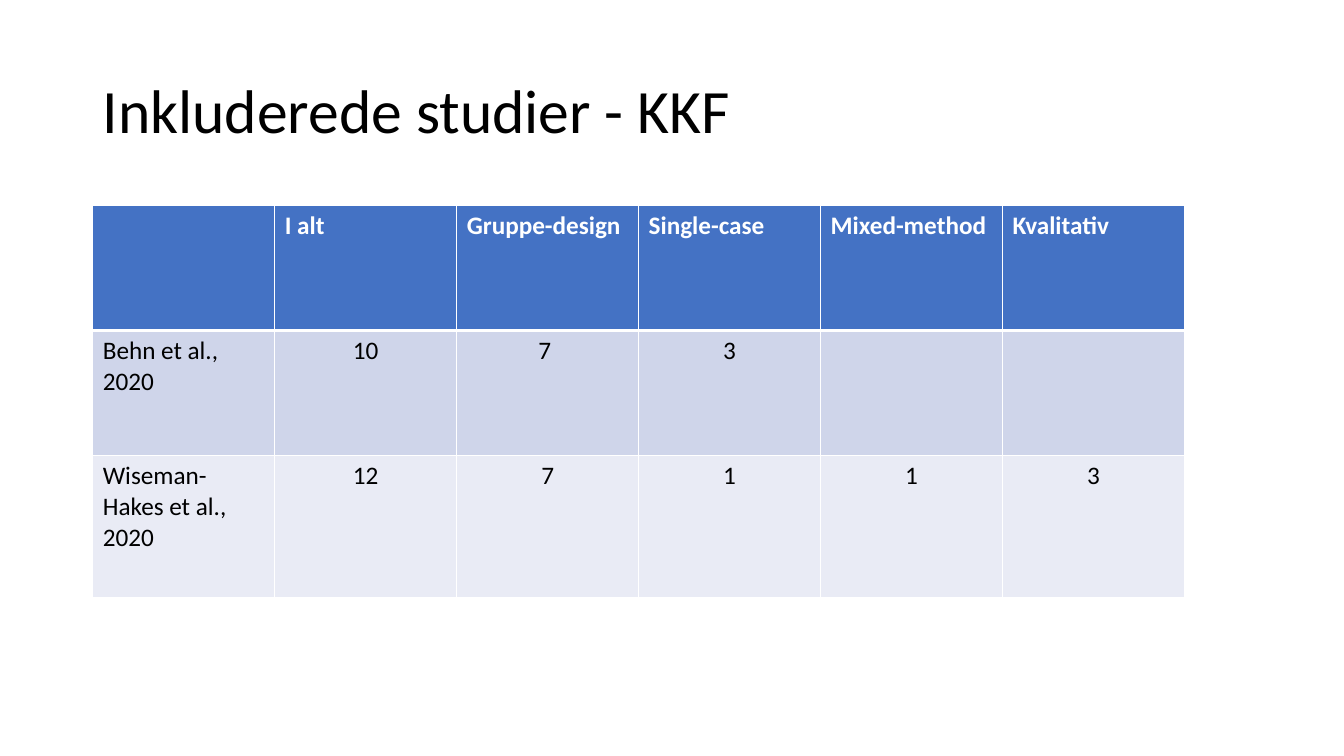
"""Build a slide with a table of the included KKF studies."""
from lxml.etree import SubElement
from pptx import Presentation
from pptx.dml.color import RGBColor
from pptx.enum.text import MSO_ANCHOR, PP_ALIGN
from pptx.oxml.ns import qn
from pptx.util import Inches, Pt

BLACK = RGBColor(0x00, 0x00, 0x00)
WHITE = RGBColor(0xFF, 0xFF, 0xFF)
HEADER_BLUE = RGBColor(0x44, 0x72, 0xC4)
BAND_DARK = RGBColor(0xCF, 0xD5, 0xEA)
BAND_LIGHT = RGBColor(0xE9, 0xEB, 0xF5)
ROW_FILLS = [HEADER_BLUE, BAND_DARK, BAND_LIGHT]
ROW_HEIGHTS = [1.24, 1.24, 1.41]
COLUMN_WIDTH = 1.805
STUDIES = [
    ["", "I alt", "Gruppe-design", "Single-case", "Mixed-method", "Kvalitativ"],
    ["Behn et al., 2020", "10", "7 ", "3", "", ""],
    ["Wiseman-Hakes et al., 2020", "12", "7", "1", "1", "3"],
]


def style_font(font, size, color, bold=False):
    font.name = "Calibri"
    font.size = Pt(size)
    font.bold = bold
    font.color.rgb = color


def add_border(cell, side, width):
    properties = cell._tc.get_or_add_tcPr()
    line = SubElement(properties, qn(f"a:ln{side}"), w=str(Pt(width)))
    fill = SubElement(line, qn("a:solidFill"))
    SubElement(fill, qn("a:srgbClr"), val=str(WHITE))


deck = Presentation()
deck.slide_width = Inches(13.33)
deck.slide_height = Inches(7.5)
page = deck.slides.add_slide(deck.slide_layouts[6])

title_box = page.shapes.add_textbox(Inches(0.92), Inches(0.4), Inches(11.5), Inches(1.45))
title_frame = title_box.text_frame
title_frame.word_wrap = True
title_frame.vertical_anchor = MSO_ANCHOR.MIDDLE
title_frame.text = "Inkluderede studier - KKF"
title_para = title_frame.paragraphs[0]
title_para.line_spacing = 0.9
style_font(title_para.runs[0].font, 44, BLACK)

row_count, column_count = len(STUDIES), len(STUDIES[0])
table = page.shapes.add_table(
    row_count, column_count, Inches(0.92), Inches(2.04),
    Inches(COLUMN_WIDTH * column_count), Inches(sum(ROW_HEIGHTS)),
).table
for column in table.columns:
    column.width = Inches(COLUMN_WIDTH)

for row_index, texts in enumerate(STUDIES):
    table.rows[row_index].height = Inches(ROW_HEIGHTS[row_index])
    is_header = row_index == 0
    for column_index, text in enumerate(texts):
        cell = table.cell(row_index, column_index)
        add_border(cell, "L", 1)
        add_border(cell, "R", 1)
        add_border(cell, "T", 3 if row_index == 1 else 1)
        add_border(cell, "B", 3 if is_header else 1)
        cell.fill.solid()
        cell.fill.fore_color.rgb = ROW_FILLS[row_index]
        cell.text_frame.text = text
        para = cell.text_frame.paragraphs[0]
        style_font(para.font, 18, WHITE if is_header else BLACK, is_header)
        for span in para.runs:
            style_font(span.font, 18, WHITE if is_header else BLACK, is_header)
        if not is_header and column_index > 0:
            para.alignment = PP_ALIGN.CENTER

deck.save("out.pptx")
